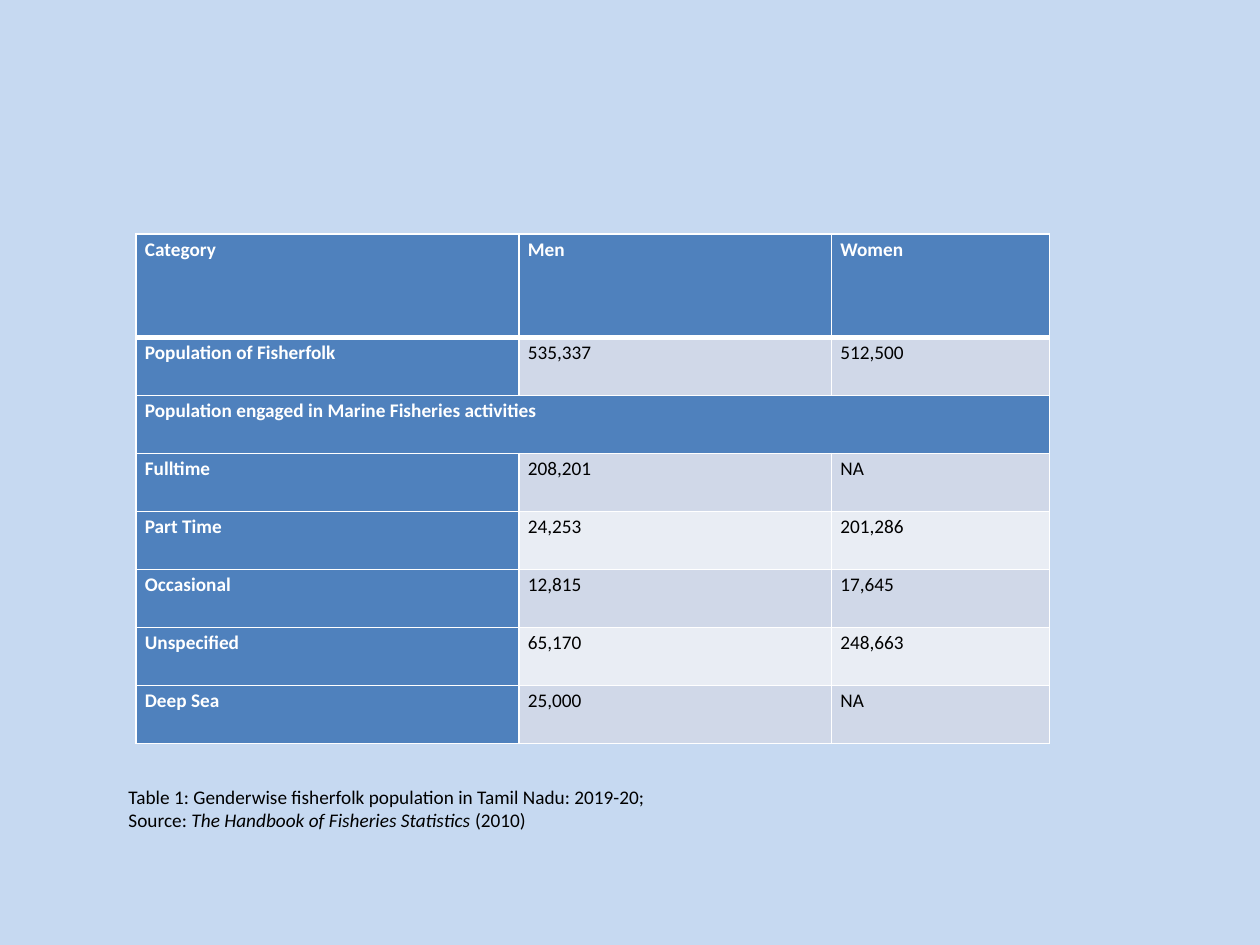
import pptx
import pptx.dml.color
import pptx.enum.text
import pptx.oxml
import pptx.oxml.ns
import pptx.util
from pptx.util import Cm

BACKGROUND = "C6D9F1"
HEADING_FILL = "4F81BD"
BAND_FILLS = ("E9EDF4", "D0D8E8")  # even rows, odd rows
WHITE, BLACK = "FFFFFF", "000000"

BASE_FONT = {"name": "Calibri", "size": pptx.util.Pt(11), "bold": False, "italic": False}
CELL_FORMAT = {"margin_left": Cm(0.18), "margin_right": Cm(0.18),
               "margin_top": 0, "margin_bottom": 0}
CELL_SPACING = {"line_spacing": 1.15, "space_before": pptx.util.Pt(12)}

COLUMN_WIDTHS = (7.72, 6.3, 4.4)
HEADER_HEIGHT, ROW_HEIGHT = 2.08, 1.17
FISHERFOLK = (
    ("Category", "Men", "Women"),
    ("Population of Fisherfolk", "535,337", "512,500"),
    ("Population engaged in Marine Fisheries activities",),
    ("Fulltime", "208,201", "NA"),
    ("Part Time", "24,253", "201,286"),
    ("Occasional", "12,815", "17,645"),
    ("Unspecified", "65,170", "248,663"),
    ("Deep Sea", "25,000", "NA"),
)


def paint(color_format, hex_color):
    color_format.rgb = pptx.dml.color.RGBColor.from_string(hex_color)


def fill_solid(fill, hex_color):
    fill.solid()
    paint(fill.fore_color, hex_color)


def apply_format(target, values):
    for attribute, value in values.items():
        setattr(target, attribute, value)


def add_run(paragraph, wording, color, **changes):
    run = paragraph.add_run()
    run.text = wording
    apply_format(run.font, {**BASE_FONT, **changes})
    paint(run.font.color, color)


def set_borders(cell, widths):
    """Draw white cell edges; widths are points by side, in schema order."""
    properties = cell._tc.get_or_add_tcPr()
    for side, width in widths.items():
        properties.append(pptx.oxml.parse_xml(
            f'<a:ln{side} {pptx.oxml.ns.nsdecls("a")} w="{pptx.util.Pt(width)}">'
            f'<a:solidFill><a:srgbClr val="{WHITE}"/></a:solidFill></a:ln{side}>'))


def format_cell(cell, row, is_heading):
    apply_format(cell, CELL_FORMAT)
    set_borders(cell, {"L": 1, "R": 1, "T": 3 if row == 1 else 1, "B": 3 if row == 0 else 1})
    fill_solid(cell.fill, HEADING_FILL if is_heading else BAND_FILLS[row % 2])


def add_population_table(slide):
    row_count, column_count = len(FISHERFOLK), len(COLUMN_WIDTHS)
    population = slide.shapes.add_table(
        row_count, column_count, Cm(2.74), Cm(4.72), Cm(sum(COLUMN_WIDTHS)),
        Cm(HEADER_HEIGHT + ROW_HEIGHT * (row_count - 1))).table
    for column, width in zip(population.columns, COLUMN_WIDTHS):
        column.width = Cm(width)

    for row, entries in enumerate(FISHERFOLK):
        population.rows[row].height = Cm(ROW_HEIGHT if row else HEADER_HEIGHT)
        is_section = len(entries) == 1
        for column in range(column_count):
            is_heading = row == 0 or column == 0 or is_section
            cell = population.cell(row, column)
            format_cell(cell, row, is_heading)
            if column < len(entries):
                paragraph = cell.text_frame.paragraphs[0]
                apply_format(paragraph, CELL_SPACING)
                add_run(paragraph, entries[column], WHITE if is_heading else BLACK,
                        bold=is_heading)
        if is_section:
            population.cell(row, 0).merge(population.cell(row, column_count - 1))


def add_caption(slide):
    caption = slide.shapes.add_textbox(Cm(2.34), Cm(15.7), Cm(14.17), Cm(1.19)).text_frame
    apply_format(caption, {
        "word_wrap": True,
        "vertical_anchor": pptx.enum.text.MSO_ANCHOR.MIDDLE,
        "auto_size": pptx.enum.text.MSO_AUTO_SIZE.SHAPE_TO_FIT_TEXT,
    })
    paragraph = caption.paragraphs[0]
    add_run(paragraph, "Table 1: Genderwise fisherfolk population in Tamil Nadu: 2019-20;", BLACK)
    paragraph.add_line_break()
    add_run(paragraph, "Source: ", BLACK)
    add_run(paragraph, "The Handbook of Fisheries Statistics", BLACK, italic=True)
    add_run(paragraph, " (2010)", BLACK)


def main():
    presentation = pptx.Presentation()
    apply_format(presentation, {"slide_width": Cm(25.4), "slide_height": Cm(19.05)})

    # Blank layout with a plain background
    slide = presentation.slides.add_slide(presentation.slide_layouts[6])
    fill_solid(slide.background.fill, BACKGROUND)

    # Table and its caption
    add_population_table(slide)
    add_caption(slide)

    presentation.save("out.pptx")


if __name__ == "__main__":
    main()
